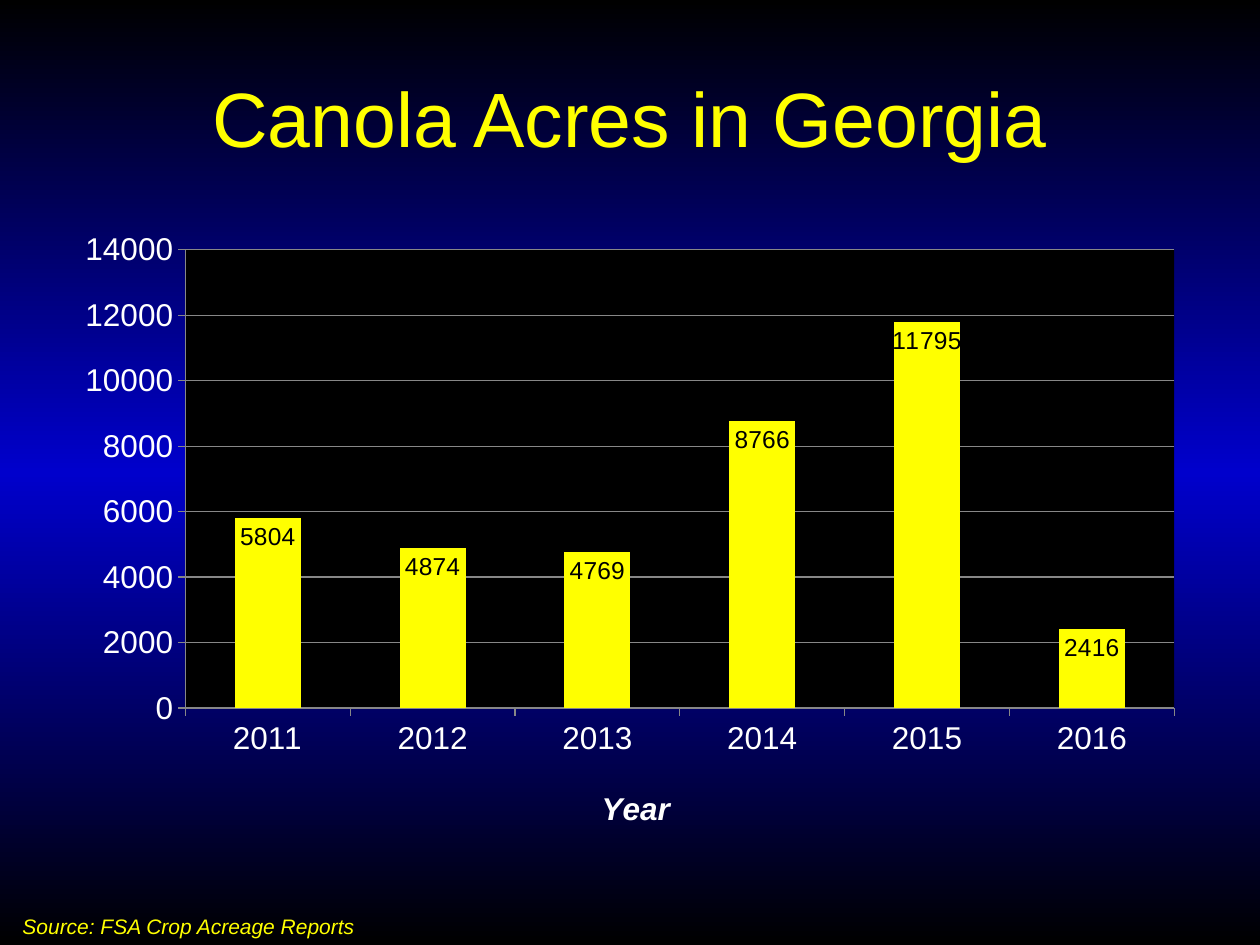
from copy import deepcopy

from lxml import etree
from pptx import Presentation
from pptx.chart.data import CategoryChartData
from pptx.dml.color import RGBColor
from pptx.enum.chart import XL_CHART_TYPE, XL_LABEL_POSITION, XL_TICK_MARK
from pptx.enum.text import MSO_ANCHOR, MSO_AUTO_SIZE, PP_ALIGN
from pptx.oxml import parse_xml
from pptx.oxml.ns import nsdecls, qn
from pptx.util import Inches, Pt

FONT = "Arial"
YELLOW, WHITE, BLACK, BLUE, GRAY = "FFFF00", "FFFFFF", "000000", "0000CC", "878787"
ACRES = {"2011": 5804, "2012": 4874, "2013": 4769,
         "2014": 8766, "2015": 11795, "2016": 2416}


def rgb(value):
    return RGBColor.from_string(value)


def style_font(font, size, color, bold=False, italic=False):
    font.name = FONT
    font.size = Pt(size)
    font.color.rgb = rgb(color)
    font.bold = bold
    font.italic = italic


def write_text(frame, text, size, color, align=PP_ALIGN.LEFT, **style):
    para = frame.paragraphs[0]
    para.alignment = align
    span = para.add_run()
    span.text = text
    style_font(span.font, size, color, **style)


def paint_background(page):
    """Fade from black to blue at mid-height and back to black."""
    fill = page.background.fill
    fill.gradient()
    fill.gradient_angle = 90
    stops = fill.gradient_stops
    for stop, color, position in zip(stops, (BLACK, BLACK), (0, 1)):
        stop.color.rgb = rgb(color)
        stop.position = position
    stop_list = page.background._cSld.find(".//" + qn("a:gsLst"))
    stop_list.insert(1, deepcopy(stop_list[0]))
    middle = fill.gradient_stops[1]
    middle.color.rgb = rgb(BLUE)
    middle.position = 0.5


def add_title(page, box):
    title = page.shapes.title
    title.left, title.top, title.width, title.height = map(Inches, box)
    title.text_frame.vertical_anchor = MSO_ANCHOR.MIDDLE
    write_text(title.text_frame, "Canola Acres in Georgia", 44, YELLOW, PP_ALIGN.CENTER)


def place_manually(element, before, **settings):
    """Give a chart part a manual layout, in fractions of the chart."""
    for old in element.findall(qn("c:layout")):
        element.remove(old)
    layout = parse_xml(f"<c:layout {nsdecls('c')}><c:manualLayout/></c:layout>")
    for name, value in settings.items():
        etree.SubElement(layout[0], qn("c:" + name)).set("val", str(value))
    element.find(qn(before)).addprevious(layout)


def style_axis(axis):
    axis.major_tick_mark = XL_TICK_MARK.OUTSIDE
    axis.minor_tick_mark = XL_TICK_MARK.NONE
    axis.format.line.color.rgb = rgb(GRAY)
    style_font(axis.tick_labels.font, 18, WHITE)


def add_acres_chart(page, box):
    chart_data = CategoryChartData()
    chart_data.categories = list(ACRES)
    chart_data.add_series("Series 1", list(ACRES.values()))
    chart = page.shapes.add_chart(
        XL_CHART_TYPE.COLUMN_CLUSTERED, *map(Inches, box), chart_data).chart
    chart.has_legend = False
    chart.has_title = False
    style_font(chart.font, 18, BLACK)

    years, acres = chart.category_axis, chart.value_axis
    for axis in (years, acres):
        style_axis(axis)
    acres.minimum_scale, acres.maximum_scale, acres.major_unit = 0, 14000, 2000
    acres.major_gridlines.format.line.color.rgb = rgb(GRAY)
    write_text(years.axis_title.text_frame, "Year", 18, WHITE, PP_ALIGN.CENTER,
               bold=True, italic=True)
    place_manually(years.axis_title._element, "c:overlay",
                   xMode="edge", yMode="edge", x=0.47, y=0.9)

    plot = chart.plots[0]
    plot.gap_width = 150
    plot.vary_by_categories = False
    bars = plot.series[0]
    bars.format.fill.solid()
    bars.format.fill.fore_color.rgb = rgb(YELLOW)
    labels = bars.data_labels
    labels.show_value = True
    labels.position = XL_LABEL_POSITION.INSIDE_END
    style_font(labels.font, 14, BLACK)

    plot_area = chart._chartSpace.find(".//" + qn("c:plotArea"))
    place_manually(plot_area, "c:barChart", layoutTarget="inner", xMode="edge",
                   yMode="edge", x=0.108, y=0.047, w=0.872, h=0.735)
    plot_area.append(parse_xml(
        f"<c:spPr {nsdecls('c', 'a')}><a:solidFill>"
        f'<a:srgbClr val="{BLACK}"/></a:solidFill></c:spPr>'))


def add_source(page, box):
    frame = page.shapes.add_textbox(*map(Inches, box)).text_frame
    frame.word_wrap = False
    frame.auto_size = MSO_AUTO_SIZE.SHAPE_TO_FIT_TEXT
    write_text(frame, "Source: FSA Crop Acreage Reports", 12, YELLOW, italic=True)


def main():
    deck = Presentation()
    deck.slide_width, deck.slide_height = Inches(10), Inches(7.5)
    page = deck.slides.add_slide(deck.slide_layouts[5])
    paint_background(page)
    add_title(page, (0.5, 0.3, 9, 1.25))
    add_acres_chart(page, (0.5, 1.75, 9, 4.95))
    add_source(page, (0.08, 7.2, 2.92, 0.3))
    deck.save("out.pptx")


if __name__ == "__main__":
    main()
